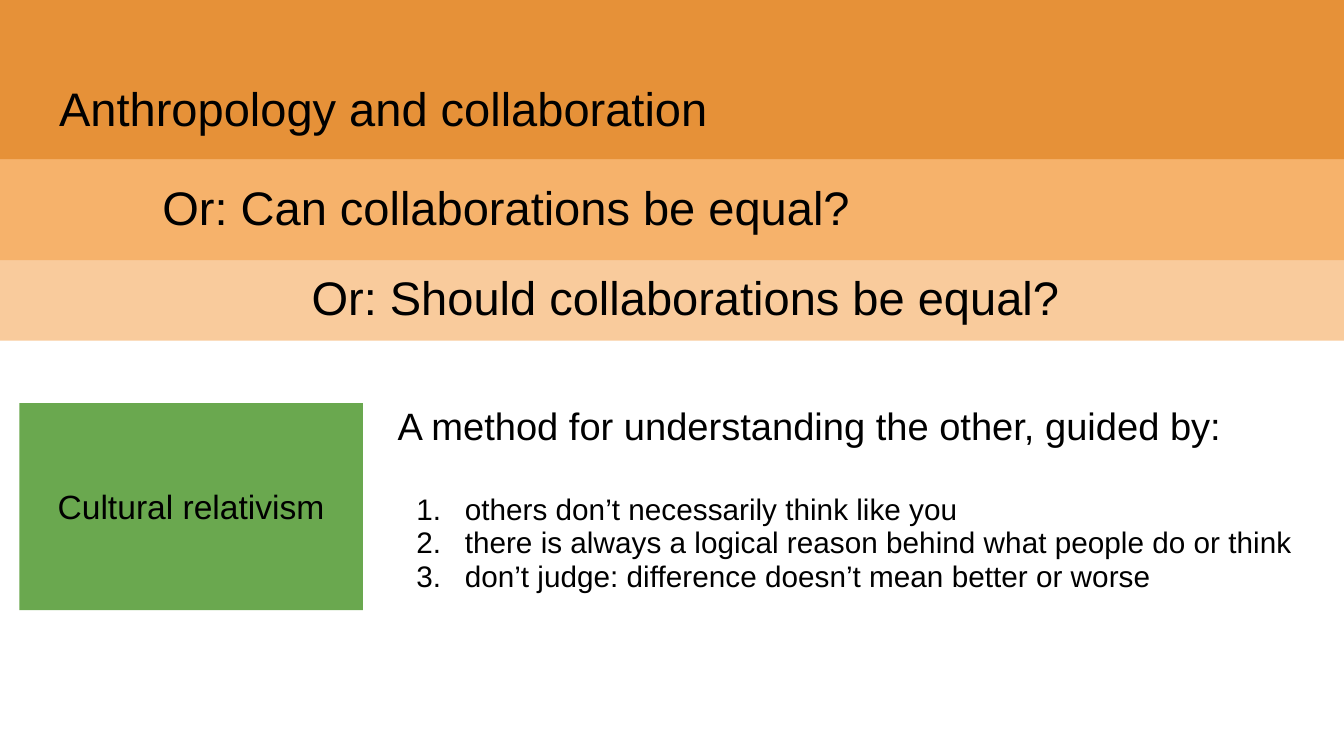
from lxml.etree import SubElement
from pptx import Presentation
from pptx.dml.color import RGBColor
from pptx.enum.shapes import MSO_SHAPE
from pptx.enum.text import MSO_ANCHOR, MSO_AUTO_SIZE, PP_ALIGN
from pptx.oxml.ns import qn
from pptx.util import Emu, Pt

SCALE = 4572
BLACK = "000000"
BANDS = [(382, 125, "F9CB9C"), (232, 155, "F6B26B"), (0, 237, "E69138")]
POINTS = [
    "others don’t necessarily think like you",
    "there is always a logical reason behind what people do or think",
    "don’t judge: difference doesn’t mean better or worse",
]


def px(num):
    """Turn px into EMU."""
    return Emu(num * SCALE)


def color(code):
    """Turn a hex string into a colour."""
    return RGBColor.from_string(code)


def style(para, size, align=PP_ALIGN.LEFT, lines=1.0):
    """Format a paragraph and its runs."""
    para.alignment = align
    para.line_spacing = lines
    for run in para.runs:
        run.font.name = "Arial"
        run.font.size = Pt(size)
        run.font.color.rgb = color(BLACK)


def setup(shape, anchor):
    """Set the wrap, insets and anchor of a shape's text."""
    frame = shape.text_frame
    frame.word_wrap = True
    frame.auto_size = MSO_AUTO_SIZE.NONE
    frame.vertical_anchor = anchor
    frame.margin_left = frame.margin_right = px(20)
    frame.margin_top = frame.margin_bottom = px(20)
    return frame


def add_rect(slide, left, top, width, height, fill):
    """Add a plain filled rectangle."""
    rect = slide.shapes.add_shape(
        MSO_SHAPE.RECTANGLE, px(left), px(top), px(width), px(height))
    rect.shadow.inherit = False
    rect.fill.solid()
    rect.fill.fore_color.rgb = color(fill)
    rect.line.fill.background()
    return rect


def add_box(slide, left, top, width, height):
    """Add an empty text box."""
    return slide.shapes.add_textbox(px(left), px(top), px(width), px(height))


def set_head(shape, text):
    """Write a heading line into a shape."""
    frame = setup(shape, MSO_ANCHOR.MIDDLE)
    frame.text = text
    style(frame.paragraphs[0], 25.2)


def set_title(slide, text):
    """Place the title in front of the bands."""
    title = slide.shapes.title
    title.left, title.top = px(68), px(97)
    title.width, title.height = px(1864), px(126)
    title.element.getparent().append(title.element)
    set_head(title, text)


def number(para):
    """Number a paragraph with a hanging indent."""
    props = para._p.get_or_add_pPr()
    props.set("marL", str(px(100)))
    props.set("indent", str(px(-72)))
    SubElement(props, qn("a:buAutoNum"), type="arabicPeriod")


def add_method(slide):
    """Add the lead line and its numbered points."""
    frame = setup(add_box(slide, 572, 584, 1396, 358), MSO_ANCHOR.TOP)
    frame.text = "A method for understanding the other, guided by:"
    style(frame.paragraphs[0], 20.4, lines=0.95)
    for index, text in enumerate(POINTS):
        para = frame.add_paragraph()
        para.text = text
        number(para)
        style(para, 15.9, lines=0.95)
        if index == 0:
            para.space_before = Pt(23.4)


def add_label(slide):
    """Add the green block with its term."""
    block = add_rect(slide, 29, 600, 511, 308, "6AA84F")
    frame = setup(block, MSO_ANCHOR.MIDDLE)
    frame.margin_bottom = px(32)
    frame.text = "Cultural relativism"
    style(frame.paragraphs[0], 18, PP_ALIGN.CENTER, 1.15)


def main():
    """Build and save the slide."""
    deck = Presentation()
    deck.slide_width, deck.slide_height = px(2000), px(1125)
    slide = deck.slides.add_slide(deck.slide_layouts[5])
    for top, height, fill in BANDS:
        add_rect(slide, 0, top, 2000, height, fill)
    set_title(slide, "Anthropology and collaboration")
    add_method(slide)
    add_label(slide)
    set_head(add_box(slide, 444, 379, 1524, 126), "Or: Should collaborations be equal?")
    set_head(add_box(slide, 222, 245, 1556, 126), "Or: Can collaborations be equal?")
    deck.save("out.pptx")


if __name__ == "__main__":
    main()
